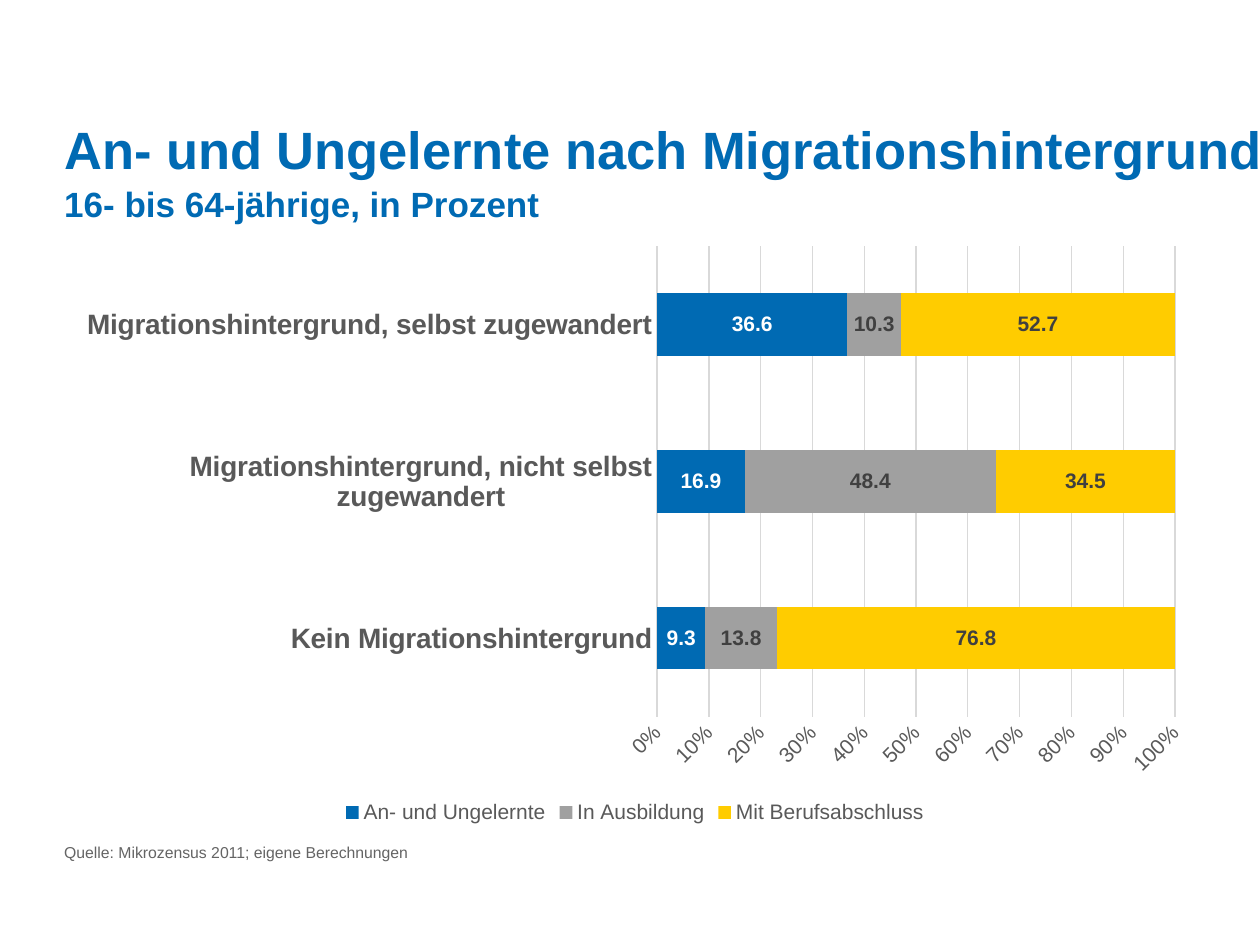
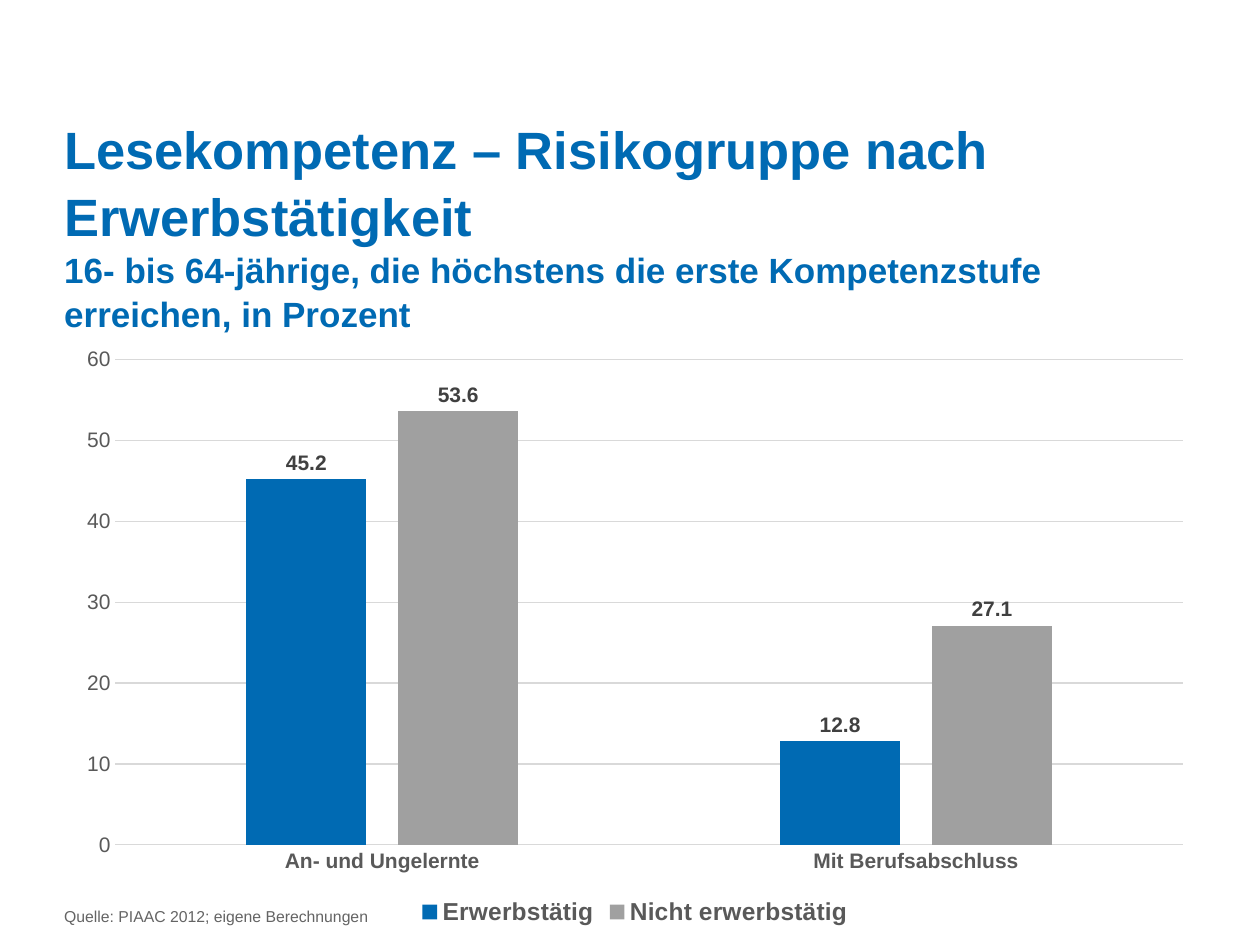
from dataclasses import dataclass

from pptx import Presentation
from pptx.chart.data import CategoryChartData
from pptx.dml.color import RGBColor
from pptx.enum.chart import (XL_CHART_TYPE, XL_LABEL_POSITION,
                             XL_LEGEND_POSITION, XL_TICK_MARK)
from pptx.enum.text import MSO_ANCHOR
from pptx.util import Inches, Pt


@dataclass(frozen=True)
class Theme:
    font: str = "Arial"
    blue: str = "006AB3"
    gray: str = "A0A0A0"
    yellow: str = "FFCC00"
    white: str = "FFFFFF"
    dark: str = "404040"
    axis: str = "595959"
    grid: str = "D9D9D9"
    source: str = "646464"
    title_size: int = 30
    subtitle_size: int = 20
    chart_size: int = 12
    legend_size: int = 14
    category_size: int = 16
    source_size: int = 9
    line_spacing: float = 1.05
    line_width: float = 0.75


THEME = Theme()
LEFT, WIDTH = 0.051, 0.906  # shares of the slide width
TITLE_TOP = 0.121           # heights and tops are shares of the slide height
CHART_HEIGHT = 0.629
SOURCE_HEIGHT = 0.027


def format_font(font, size, color, bold=False):
    font.name = THEME.font
    font.size = Pt(size)
    font.bold = bold
    font.color.rgb = RGBColor.from_string(color)


def add_run(p, text, **fmt):
    r = p.add_run()
    r.text = text
    format_font(r.font, **fmt)


class Deck:
    def __init__(self, theme):
        self.theme = theme
        self.prs = Presentation()
        self.prs.slide_width, self.prs.slide_height = Inches(10), Inches(7.5)
        self.slide = None

    def new_slide(self):
        self.slide = self.prs.slides.add_slide(self.prs.slide_layouts[6])

    def box(self, top, height, width=WIDTH):
        """Turn shares of the slide into left, top, width and height."""
        w, h = self.prs.slide_width, self.prs.slide_height
        return int(LEFT * w), int(top * h), int(width * w), int(height * h)

    def text_box(self, *box):
        tf = self.slide.shapes.add_textbox(*self.box(*box)).text_frame
        tf.word_wrap = True
        tf.vertical_anchor = MSO_ANCHOR.TOP
        tf.margin_left = tf.margin_right = tf.margin_top = tf.margin_bottom = 0
        return tf.paragraphs[0]

    def title(self, text, subtitle, height, width=WIDTH):
        t = self.theme
        p = self.text_box(TITLE_TOP, height, width)
        p.line_spacing = t.line_spacing
        add_run(p, text, size=t.title_size, color=t.blue, bold=True)
        p.add_line_break()
        add_run(p, subtitle, size=t.subtitle_size, color=t.blue, bold=True)

    def source(self, text, top):
        add_run(self.text_box(top, SOURCE_HEIGHT), text,
                size=self.theme.source_size, color=self.theme.source)

    def chart(self, kind, top, categories, series, gap, overlap, label_position):
        """Add a bar chart; series holds (name, values, fill, label colour)."""
        t = self.theme
        data = CategoryChartData(number_format="0.0")
        data.categories = categories
        for name, values, _, _ in series:
            data.add_series(name, values)
        chart = self.slide.shapes.add_chart(
            kind, *self.box(top, CHART_HEIGHT), data).chart
        chart.has_title = False
        format_font(chart.font, t.chart_size, t.axis)

        plot = chart.plots[0]
        plot.gap_width, plot.overlap = gap, overlap
        plot.vary_by_categories = False
        for s, (_, _, fill, label_color) in zip(plot.series, series):
            s.format.fill.solid()
            s.format.fill.fore_color.rgb = RGBColor.from_string(fill)
            s.invert_if_negative = False
            labels = s.data_labels
            labels.show_value = True
            labels.number_format = "#,##0.0"
            labels.number_format_is_linked = False
            labels.position = label_position
            format_font(labels.font, t.chart_size, label_color, bold=True)
        self.axes(chart)
        self.legend(chart, t.chart_size)
        return chart

    def axes(self, chart):
        t = self.theme
        cat, val = chart.category_axis, chart.value_axis
        for axis in (cat, val):
            axis.major_tick_mark = axis.minor_tick_mark = XL_TICK_MARK.NONE
            format_font(axis.tick_labels.font, t.chart_size, t.axis, axis is cat)
        cat.has_major_gridlines = False
        val.has_major_gridlines = True
        val.format.line.fill.background()
        for line in (cat.format.line, val.major_gridlines.format.line):
            line.color.rgb = RGBColor.from_string(t.grid)
            line.width = Pt(t.line_width)

    def legend(self, chart, size, bold=False):
        chart.has_legend = True
        chart.legend.position = XL_LEGEND_POSITION.BOTTOM
        chart.legend.include_in_layout = False
        format_font(chart.legend.font, size, self.theme.axis, bold)


def migration_slide(deck):
    t = deck.theme
    deck.new_slide()
    deck.title("An- und Ungelernte nach Migrationshintergrund",
               "16- bis 64-jährige, in Prozent", height=0.185, width=1.032)
    chart = deck.chart(
        XL_CHART_TYPE.BAR_STACKED_100, 0.248,
        ["Kein Migrationshintergrund",
         "Migrationshintergrund, nicht selbst zugewandert",
         "Migrationshintergrund, selbst zugewandert"],
        [("An- und Ungelernte", (9.3, 16.9, 36.6), t.blue, t.white),
         ("In Ausbildung", (13.8, 48.4, 10.3), t.gray, t.dark),
         ("Mit Berufsabschluss", (76.8, 34.5, 52.7), t.yellow, t.dark)],
        gap=150, overlap=100, label_position=XL_LABEL_POSITION.CENTER)
    chart.category_axis.tick_labels.font.size = Pt(t.category_size)
    labels = chart.value_axis.tick_labels
    labels.number_format = "0%"
    labels.number_format_is_linked = False
    deck.source("Quelle: Mikrozensus 2011; eigene Berechnungen", 0.892)


def reading_slide(deck):
    t = deck.theme
    deck.new_slide()
    deck.title("Lesekompetenz – Risikogruppe nach Erwerbstätigkeit",
               "16- bis 64-jährige, die höchstens die erste Kompetenzstufe "
               "erreichen, in Prozent", height=0.224)
    chart = deck.chart(
        XL_CHART_TYPE.COLUMN_CLUSTERED, 0.356,
        ["An- und Ungelernte", "Mit Berufsabschluss"],
        [("Erwerbstätig", (45.2, 12.8), t.blue, t.dark),
         ("Nicht erwerbstätig", (53.6, 27.1), t.gray, t.dark)],
        gap=219, overlap=-27, label_position=XL_LABEL_POSITION.OUTSIDE_END)
    axis = chart.value_axis
    axis.minimum_scale, axis.maximum_scale, axis.major_unit = 0, 60, 10
    axis.tick_labels.number_format = "0"
    axis.tick_labels.number_format_is_linked = False
    deck.legend(chart, t.legend_size, bold=True)
    deck.source("Quelle: PIAAC 2012; eigene Berechnungen", 0.96)


def main():
    deck = Deck(THEME)
    migration_slide(deck)
    reading_slide(deck)
    deck.prs.save("out.pptx")


if __name__ == "__main__":
    main()
